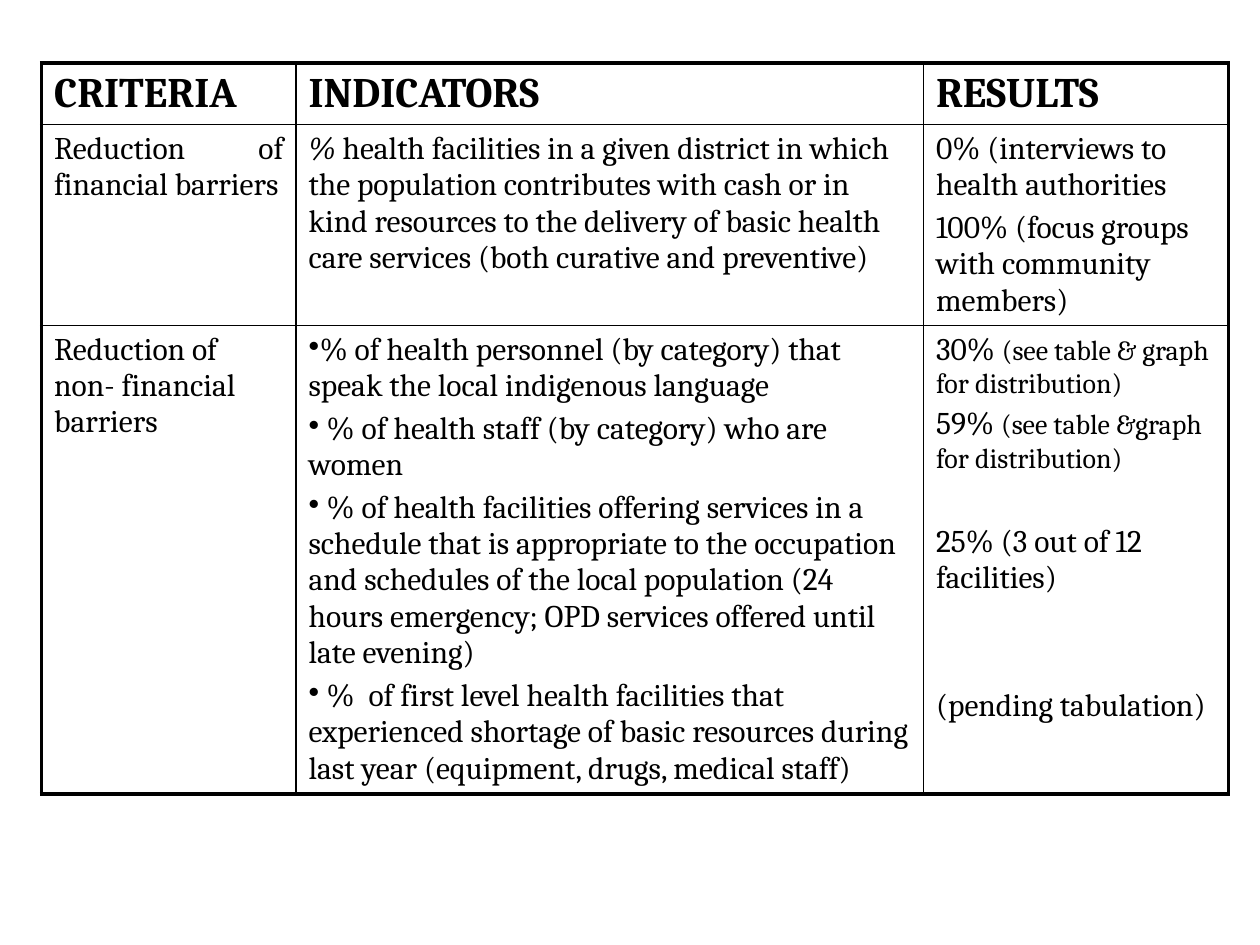
from lxml.etree import SubElement
from pptx import Presentation
from pptx.dml.color import RGBColor
from pptx.enum.text import PP_ALIGN
from pptx.oxml.ns import qn
from pptx.util import Inches, Pt

BLACK = RGBColor(0x00, 0x00, 0x00)
FONT = "Cambria"
OUTER, INNER = Pt(2.25), Pt(1)
GAP = 3.6

COLUMN_WIDTHS = [2.02, 4.98, 2.42]
ROW_HEIGHTS = [0.49, 1.59, 3.72]

SEE_TABLE = {"size": 16}

# Each cell is a list of paragraphs: (runs, paragraph options);
# each run is (text, font options).
HEADINGS = [[([(word, {"size": 24, "bold": True})], {})]
            for word in ("CRITERIA", "INDICATORS", "RESULTS")]

FINANCIAL = [
    [([("Reduction of financial barriers", {})], {"justify": True})],
    [([("% ", {"italic": True}),
       ("health facilities in a given district in which the population "
        "contributes with cash or in kind resources to the delivery of basic "
        "health care services (both curative and preventive)", {})], {})],
    [([("0% (interviews to health authorities", {})], {}),
     ([("100% (focus groups with community members)", {})], {})],
]

NON_FINANCIAL = [
    [([("Reduction of non- financial barriers", {})], {})],
    [([(indicator, {})], {"bullet": True}) for indicator in (
        "% of health personnel (by category) that speak the local indigenous "
        "language",
        " % of health staff (by category) who are women",
        " % of health facilities offering services in a schedule that is "
        "appropriate to the occupation and schedules of the local population "
        "(24 hours emergency; OPD services offered until late evening)",
        " %  of first level health facilities that experienced shortage of "
        "basic resources during last year (equipment, drugs, medical staff)",
    )],
    [([("30% ", {}), ("(see table & graph for distribution)", SEE_TABLE)], {}),
     ([("59% ", {}), ("(see table &graph for distribution)", SEE_TABLE)], {}),
     ([("25% (3 out of 12 facilities)", {})], {"before": 28}),
     ([("(pending tabulation)", {})], {"before": 52.4})],
]

ROWS = [HEADINGS, FINANCIAL, NON_FINANCIAL]


def add_border(cell, side, width):
    line = SubElement(cell._tc.get_or_add_tcPr(), qn(f"a:ln{side}"), w=str(width))
    fill = SubElement(line, qn("a:solidFill"))
    SubElement(fill, qn("a:srgbClr"), val=str(BLACK))


def write_paragraph(paragraph, runs, justify=False, bullet=False, before=GAP):
    paragraph.alignment = PP_ALIGN.JUSTIFY if justify else PP_ALIGN.LEFT
    paragraph.space_before = Pt(before)
    if bullet:
        properties = paragraph._p.get_or_add_pPr()
        properties.set("marL", "0")
        properties.set("indent", "0")
        SubElement(properties, qn("a:buChar"), char="•")
    for text, style in runs:
        run = paragraph.add_run()
        run.text = text
        run.font.name = FONT
        run.font.size = Pt(style.get("size", 18))
        run.font.bold = style.get("bold", False)
        run.font.italic = style.get("italic", False)
        run.font.color.rgb = BLACK


presentation = Presentation()
presentation.slide_width = Inches(10)
presentation.slide_height = Inches(7.5)
slide = presentation.slides.add_slide(presentation.slide_layouts[6])

criteria = slide.shapes.add_table(
    len(ROWS), len(COLUMN_WIDTHS), Inches(0.33), Inches(0.5),
    Inches(sum(COLUMN_WIDTHS)), Inches(sum(ROW_HEIGHTS))).table
criteria.first_row = False
criteria.horz_banding = False
for column, width in zip(criteria.columns, COLUMN_WIDTHS):
    column.width = Inches(width)
for row, height in zip(criteria.rows, ROW_HEIGHTS):
    row.height = Inches(height)

last_row, last_column = len(ROWS) - 1, len(COLUMN_WIDTHS) - 1
for r, row_content in enumerate(ROWS):
    for c, paragraphs in enumerate(row_content):
        cell = criteria.cell(r, c)
        on_edge = {"L": c == 0, "R": c == last_column,
                   "T": r == 0, "B": r == last_row}
        for side, is_outer in on_edge.items():
            add_border(cell, side, OUTER if is_outer else INNER)
        cell.fill.background()
        for i, (runs, options) in enumerate(paragraphs):
            frame = cell.text_frame
            paragraph = frame.add_paragraph() if i else frame.paragraphs[0]
            write_paragraph(paragraph, runs, **options)

presentation.save("out.pptx")
